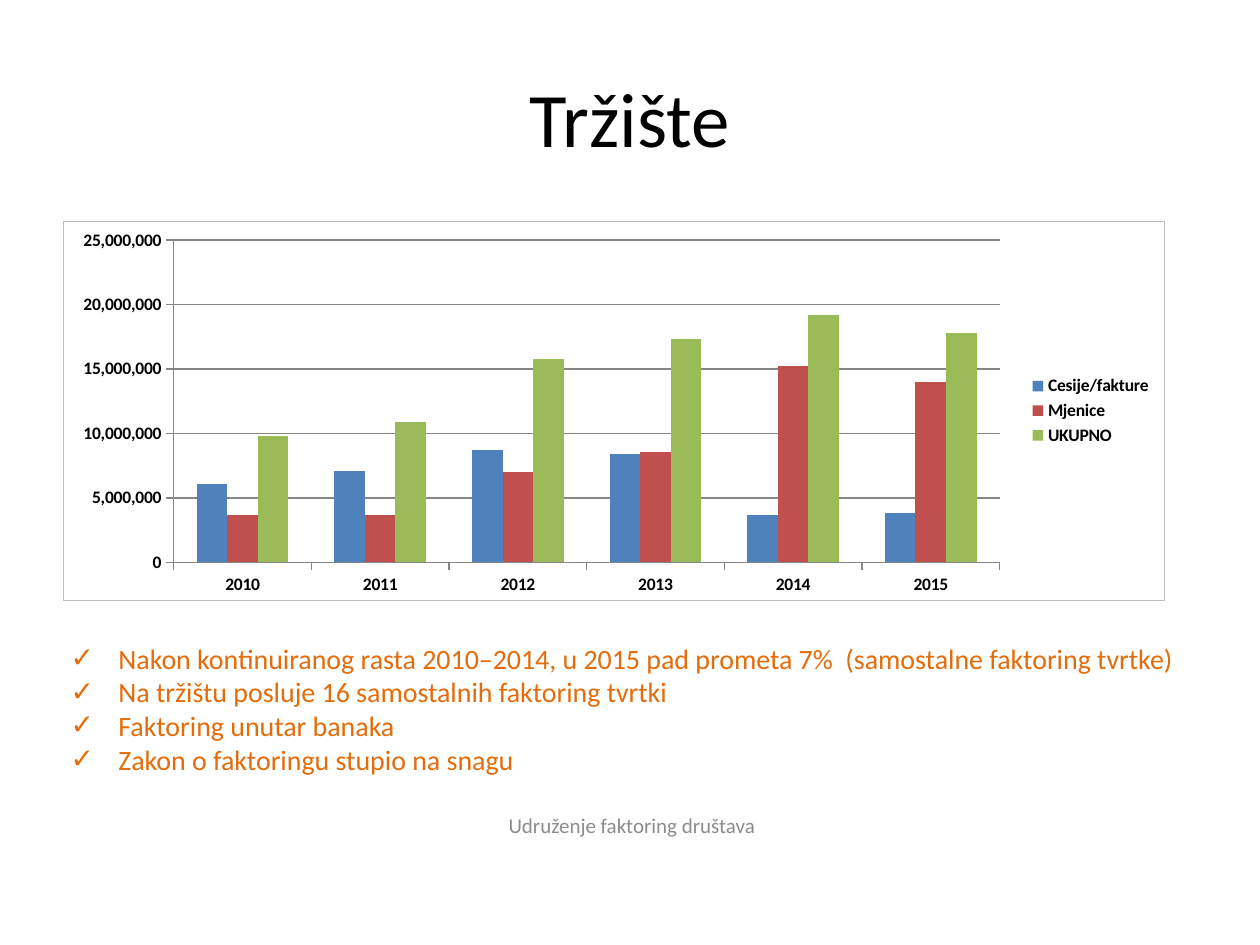
from dataclasses import dataclass

import lxml.etree
import pptx
import pptx.chart.data
import pptx.dml.color
import pptx.enum.chart
import pptx.enum.text
import pptx.oxml
import pptx.oxml.ns
import pptx.util

qn = pptx.oxml.ns.qn
ALIGN = pptx.enum.text.PP_ALIGN
ANCHOR = pptx.enum.text.MSO_ANCHOR


@dataclass(frozen=True)
class Theme:
    font: str = "Calibri"
    ink: str = "000000"
    accent: str = "E46C0A"
    muted: str = "8C8C8C"
    axis: str = "868686"
    border: str = "BDBDBD"
    series: tuple = ("4F81BD", "C0504D", "9BBB59")
    title_size: int = 44
    point_size: int = 16
    footer_size: int = 12
    chart_size: int = 10


THEME = Theme()
WIDTH, HEIGHT = pptx.util.Inches(10), pptx.util.Inches(7.5)
COLUMNS, ROWS = 100, 75
HANGING = pptx.util.Inches(0.38)

YEARS = ["2010", "2011", "2012", "2013", "2014", "2015"]
TURNOVER = {
    "Cesije/fakture": (6100000, 7100000, 8700000, 8400000, 3700000, 3800000),
    "Mjenice": (3700000, 3700000, 7000000, 8600000, 15200000, 14000000),
    "UKUPNO": (9800000, 10900000, 15800000, 17300000, 19200000, 17800000),
}
MARKET_POINTS = [
    "Nakon kontinuiranog rasta 2010–2014, u 2015 pad prometa 7%  (samostalne faktoring tvrtke)",
    "Na tržištu posluje 16 samostalnih faktoring tvrtki",
    "Faktoring unutar banaka",
    "Zakon o faktoringu stupio na snagu",
]


def grid_box(column, row, columns, rows):
    across, down = WIDTH / COLUMNS, HEIGHT / ROWS
    return (round(column * across), round(row * down),
            round(columns * across), round(rows * down))


def rgb(color):
    return pptx.dml.color.RGBColor.from_string(color)


def style_font(font, size, color, bold=False):
    font.name = THEME.font
    font.size = pptx.util.Pt(size)
    font.bold = bold
    font.color.rgb = rgb(color)


def add_check(paragraph):
    properties = paragraph._p.get_or_add_pPr()
    properties.set("marL", str(HANGING))
    properties.set("indent", str(-HANGING))
    lxml.etree.SubElement(properties, qn("a:buFont"), typeface=THEME.font)
    lxml.etree.SubElement(properties, qn("a:buChar"), char="✓")


def add_text(slide, box, lines, *, size, color, align=ALIGN.LEFT,
             anchor=ANCHOR.TOP, checked=False, inset=True):
    frame = slide.shapes.add_textbox(*box).text_frame
    frame.word_wrap = True
    frame.vertical_anchor = anchor
    if not inset:
        frame.margin_left = frame.margin_right = 0
        frame.margin_top = frame.margin_bottom = 0
    frame.text = "\n".join(lines)
    for paragraph in frame.paragraphs:
        paragraph.alignment = align
        if checked:
            add_check(paragraph)
        style_font(paragraph.runs[0].font, size, color)


def add_title(slide, box):
    add_text(slide, box, ["Tržište"], size=THEME.title_size, color=THEME.ink,
             align=ALIGN.CENTER, anchor=ANCHOR.MIDDLE)


def style_axis(axis):
    axis.major_tick_mark = pptx.enum.chart.XL_TICK_MARK.OUTSIDE
    axis.minor_tick_mark = pptx.enum.chart.XL_TICK_MARK.NONE
    axis.format.line.color.rgb = rgb(THEME.axis)
    style_font(axis.tick_labels.font, THEME.chart_size, THEME.ink, bold=True)


def place_plot(chart, **shares):
    area = chart._chartSpace.chart.plotArea
    for old in area.findall(qn("c:layout")):
        area.remove(old)
    layout = lxml.etree.Element(qn("c:layout"))
    manual = lxml.etree.SubElement(layout, qn("c:manualLayout"))
    settings = {"layoutTarget": "inner", "xMode": "edge", "yMode": "edge", **shares}
    for key, value in settings.items():
        lxml.etree.SubElement(manual, qn(f"c:{key}"), val=str(value))
    area.insert(0, layout)


def add_border(chart):
    chart._chartSpace.chart.addnext(pptx.oxml.parse_xml(
        '<c:spPr xmlns:c="http://schemas.openxmlformats.org/drawingml/2006/chart" '
        'xmlns:a="http://schemas.openxmlformats.org/drawingml/2006/main">'
        f'<a:noFill/><a:ln w="{pptx.util.Pt(0.75)}"><a:solidFill>'
        f'<a:srgbClr val="{THEME.border}"/></a:solidFill></a:ln></c:spPr>'))


def add_turnover_chart(slide, box):
    turnover = pptx.chart.data.CategoryChartData(number_format="#,##0")
    turnover.categories = YEARS
    for name, values in TURNOVER.items():
        turnover.add_series(name, values)
    chart = slide.shapes.add_chart(
        pptx.enum.chart.XL_CHART_TYPE.COLUMN_CLUSTERED, *box, turnover).chart
    style_font(chart.font, THEME.chart_size, THEME.ink)
    chart.has_title = False

    plot = chart.plots[0]
    plot.gap_width = 150
    plot.overlap = 0
    plot.vary_by_categories = False
    for series, color in zip(plot.series, THEME.series):
        series.format.fill.solid()
        series.format.fill.fore_color.rgb = rgb(color)

    style_axis(chart.category_axis)
    scale = chart.value_axis
    style_axis(scale)
    scale.minimum_scale, scale.maximum_scale = 0, 25000000
    scale.major_unit = 5000000
    scale.tick_labels.number_format = "#,##0"
    scale.tick_labels.number_format_is_linked = False
    scale.has_major_gridlines = True
    scale.major_gridlines.format.line.color.rgb = rgb(THEME.axis)

    chart.has_legend = True
    chart.legend.position = pptx.enum.chart.XL_LEGEND_POSITION.RIGHT
    chart.legend.include_in_layout = False
    style_font(chart.legend.font, THEME.chart_size, THEME.ink, bold=True)
    place_plot(chart, x=0.1, y=0.05, w=0.75, h=0.85)
    add_border(chart)


def add_market_points(slide, box):
    add_text(slide, box, MARKET_POINTS, size=THEME.point_size, color=THEME.accent,
             checked=True, inset=False)


def add_footer(slide, box):
    add_text(slide, box, ["Udruženje faktoring društava"], size=THEME.footer_size,
             color=THEME.muted, align=ALIGN.CENTER, anchor=ANCHOR.MIDDLE)


def main():
    deck = pptx.Presentation()
    deck.slide_width, deck.slide_height = WIDTH, HEIGHT
    slide = deck.slides.add_slide(deck.slide_layouts[6])
    add_title(slide, grid_box(5, 3, 90, 12.5))
    add_market_points(slide, grid_box(5.6, 50.9, 88.5, 11.7))
    add_footer(slide, grid_box(34.3, 64.3, 31.7, 2.4))
    add_turnover_chart(slide, grid_box(5, 17.5, 87.5, 30.2))
    deck.save("out.pptx")


if __name__ == "__main__":
    main()
